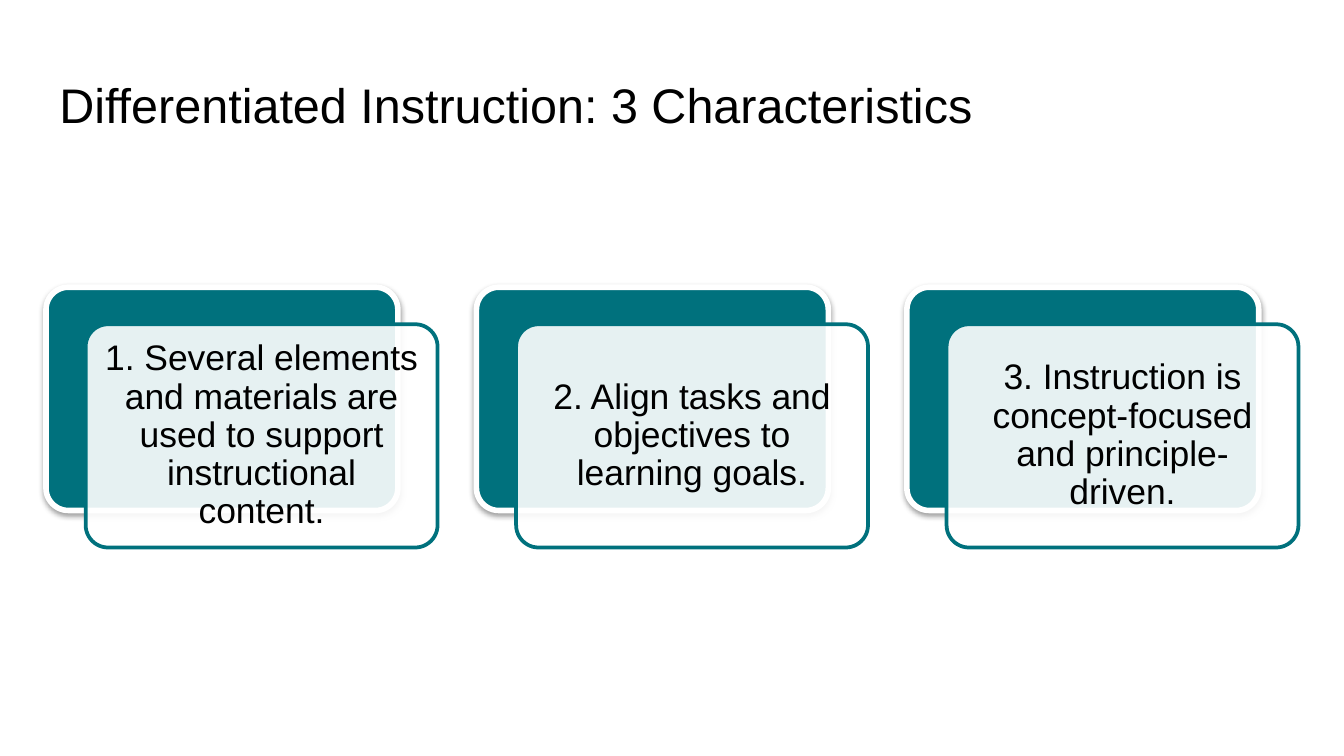
from lxml.etree import SubElement
from pptx import Presentation
from pptx.dml.color import RGBColor
from pptx.enum.shapes import MSO_SHAPE as Shape
from pptx.enum.text import MSO_ANCHOR as Anchor, MSO_AUTO_SIZE as AutoSize, PP_ALIGN as Align
from pptx.oxml.ns import qn
from pptx.util import Cm, Pt

COLORS = {"teal": "00717D", "white": "FFFFFF", "black": "000000"}
FONT = "Arial"
TITLE = "Differentiated Instruction: 3 Characteristics"
CHARACTERISTICS = [
    "1. Several elements and materials are used to support instructional content.",
    "2. Align tasks and objectives to learning goals.",
    "3. Instruction is concept-focused and principle-driven.",
]


def color(name):
    return RGBColor.from_string(COLORS[name])


def write_text(box, text, size, align, inset):
    frame = box.text_frame
    frame.word_wrap = True
    frame.auto_size = AutoSize.NONE
    frame.vertical_anchor = Anchor.MIDDLE
    frame.margin_left = frame.margin_right = Cm(inset)
    frame.margin_top = frame.margin_bottom = Cm(inset)
    para = frame.paragraphs[0]
    para.alignment = align
    para.line_spacing = 0.9
    span = para.add_run()
    span.text = text
    span.font.name = FONT
    span.font.size = Pt(size)
    span.font.color.rgb = color("black")


def add_title(page, left, top, width, height):
    box = page.shapes.title
    box.left, box.top, box.width, box.height = Cm(left), Cm(top), Cm(width), Cm(height)
    write_text(box, TITLE, 26, Align.LEFT, 0.25)


def add_panel(page, left, top, width, height, fill, line, line_width):
    panel = page.shapes.add_shape(
        Shape.ROUNDED_RECTANGLE, Cm(left), Cm(top), Cm(width), Cm(height))
    panel.adjustments[0] = 0.1
    panel.shadow.inherit = False
    panel.fill.solid()
    panel.fill.fore_color.rgb = color(fill)
    panel.line.color.rgb = color(line)
    panel.line.width = Pt(line_width)
    return panel


def add_shadow(panel):
    effects = panel._element.spPr.find(qn("a:effectLst"))
    shadow = SubElement(effects, qn("a:outerShdw"), blurRad=str(Pt(3.1)),
                        dist=str(Pt(1.6)), dir="5400000", rotWithShape="0")
    shade = SubElement(shadow, qn("a:srgbClr"), val=COLORS["black"])
    SubElement(shade, qn("a:alpha"), val="38000")


def set_opacity(panel, percent):
    fill = panel._element.spPr.find(qn("a:solidFill"))
    SubElement(fill[0], qn("a:alpha"), val=str(percent * 1000))


def add_card(page, text, left, top, width, height):
    shift_x, shift_y = 0.75, 0.7
    size = width - shift_x, height - shift_y
    back = add_panel(page, left, top, *size, "teal", "white", 3)
    add_shadow(back)
    front = add_panel(page, left + shift_x, top + shift_y, *size, "white", "teal", 2)
    set_opacity(front, 90)
    write_text(front, text, 19, Align.CENTER, 0.2)


def add_card_row(page, left, top, width, height):
    card_width = 7.4
    pitch = (width - card_width) / (len(CHARACTERISTICS) - 1)
    for index, text in enumerate(CHARACTERISTICS):
        add_card(page, text, left + index * pitch, top, card_width, height)


def main():
    deck = Presentation()
    deck.slide_width, deck.slide_height = Cm(25.4), Cm(14.29)
    page = deck.slides.add_slide(deck.slide_layouts[5])
    add_title(page, 0.87, 1.24, 23.67, 1.6)
    add_card_row(page, 0.87, 5.43, 23.67, 4.92)
    deck.save("out.pptx")


if __name__ == "__main__":
    main()
